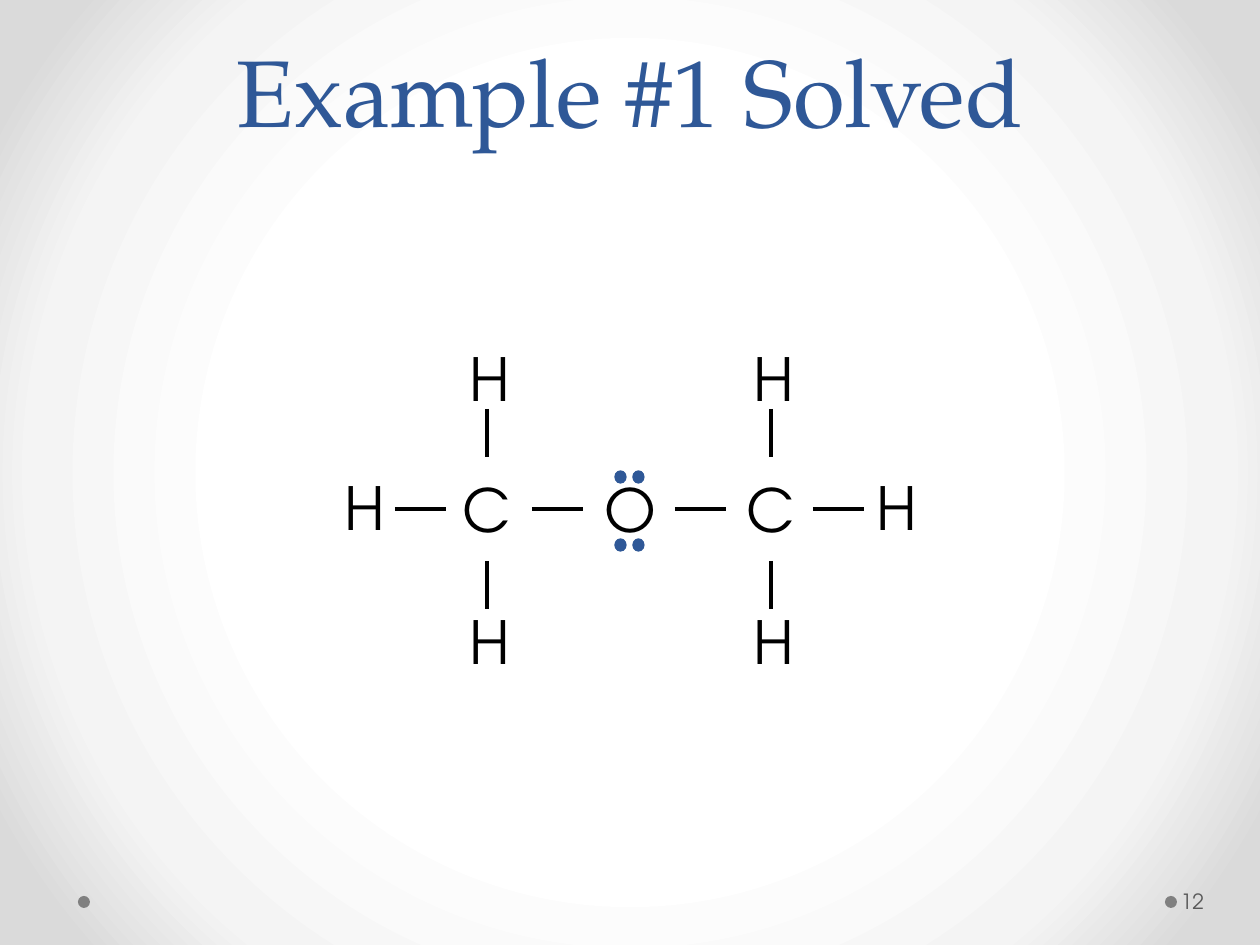
from dataclasses import dataclass
from itertools import product

from lxml import etree
from pptx import Presentation
from pptx import util as u
from pptx.dml.color import RGBColor
from pptx.enum import shapes, text
from pptx.oxml import ns, parse_xml

PX = u.Inches(1) / 126


@dataclass(frozen=True)
class Theme:
    accent: str = "2F5897"
    ink: str = "000000"
    muted: str = "595959"
    marker: str = "808080"
    glow: tuple = ((50, "FFFFFF"), (76, "F4F4F4"), (92, "DADADA"))
    title_font: str = "TeX Gyre Pagella"
    body_font: str = "TeX Gyre Adventor"
    title_size: int = 54
    atom_size: int = 34
    number_size: int = 12


THEME = Theme()


def px(*lengths):
    return [u.Emu(round(n * PX)) for n in lengths]


def rgb(color):
    return RGBColor.from_string(color)


def set_background(s):
    """Fill the slide with a gradient spreading from its centre."""
    s.background.fill.solid()
    stops = "".join(
        f'<a:gs pos="{pos * 1000}"><a:srgbClr val="{color}"/></a:gs>'
        for pos, color in THEME.glow)
    gradient = parse_xml(
        f'<a:gradFill {ns.nsdecls("a")} rotWithShape="1"><a:gsLst>{stops}</a:gsLst>'
        '<a:path path="circle"><a:fillToRect l="50000" t="50000" r="50000" b="50000"/>'
        '</a:path></a:gradFill>')
    solid = s.background._cSld.find(".//" + ns.qn("a:solidFill"))
    solid.getparent().replace(solid, gradient)


def add_text(s, words, box, font, size, color, anchor=text.MSO_ANCHOR.TOP):
    tf = s.shapes.add_textbox(*px(*box)).text_frame
    tf.word_wrap = True
    tf.vertical_anchor = anchor
    p = tf.paragraphs[0]
    p.text = words
    p.font.name, p.font.size = font, u.Pt(size)
    p.font.color.rgb = rgb(color)
    return tf


def add_title(s, words):
    tf = add_text(s, words, (63, 0, 1134, 153), THEME.title_font,
                  THEME.title_size, THEME.accent, text.MSO_ANCHOR.BOTTOM)
    p = tf.paragraphs[0]
    p.alignment = text.PP_ALIGN.CENTER
    p.line_spacing = u.Pt(58)


def add_atom(s, symbol, x, y):
    add_text(s, symbol, (x, y, 60, 84), THEME.body_font,
             THEME.atom_size, THEME.ink)


def add_bond(s, x1, y1, x2, y2):
    line = s.shapes.add_connector(shapes.MSO_CONNECTOR.STRAIGHT,
                                  *px(x1, y1, x2, y2))
    line.line.color.rgb = rgb(THEME.ink)
    line.line.width = u.Pt(2.25)
    etree.SubElement(line._element.spPr, ns.qn("a:effectLst"))


def add_dot(s, box, color, outlined=False):
    sp = s.shapes.add_shape(shapes.MSO_SHAPE.OVAL, *px(*box))
    sp.shadow.inherit = False
    sp.fill.solid()
    sp.fill.fore_color.rgb = rgb(color)
    if outlined:
        sp.line.color.rgb = rgb(color)
        sp.line.width = u.Pt(0.75)
    else:
        sp.line.fill.background()


def add_footer(s, number):
    for x in (1165, 78):
        add_dot(s, (x, 896, 12, 12), THEME.marker)
    tf = add_text(s, number, (1177, 876, 77, 50), THEME.body_font,
                  THEME.number_size, THEME.muted, text.MSO_ANCHOR.MIDDLE)
    tf.margin_left, tf.margin_right = u.Inches(0.03), u.Inches(0.05)


def add_molecule(s):
    """Draw the atoms, the bonds between them and the dots around the O."""
    for carbon_x in (450, 734):
        add_atom(s, "C", carbon_x, 467)
        for y in (336, 599):
            add_atom(s, "H", carbon_x + 7, y)
        for y in (409, 561):
            add_bond(s, carbon_x + 37, y, carbon_x + 37, y + 48)
    add_atom(s, "O", 592, 467)
    for x in (332, 864):
        add_atom(s, "H", x, 465)
    for x in (395, 532, 675, 813):
        add_bond(s, x, 509, x + 51, 509)
    for y, x in product((471, 539), (615, 633)):
        add_dot(s, (x, y, 11, 12), THEME.accent, outlined=True)


def main():
    prs = Presentation()
    prs.slide_width, prs.slide_height = px(1260, 945)
    s = prs.slides.add_slide(prs.slide_layouts[6])
    set_background(s)
    add_title(s, "Example #1 Solved")
    add_molecule(s)
    add_footer(s, "12")
    prs.save("out.pptx")


if __name__ == "__main__":
    main()
